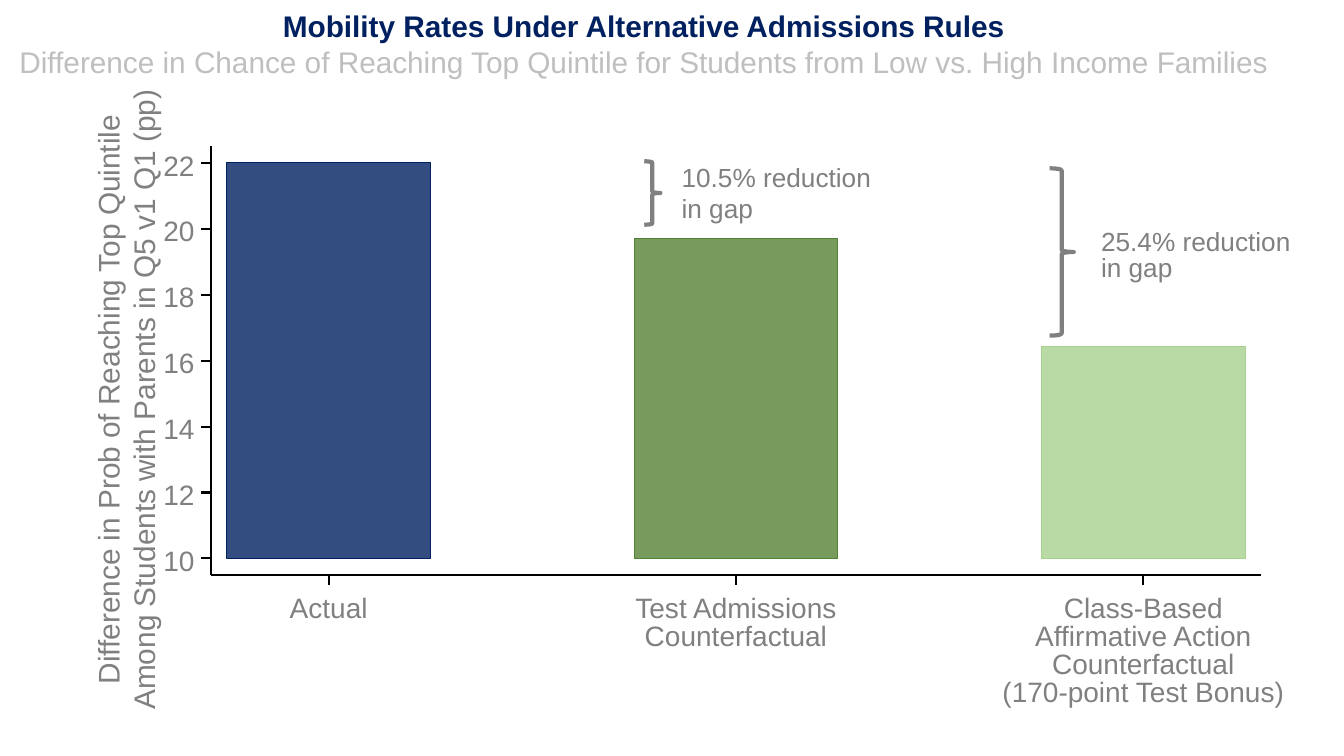
from lxml.etree import SubElement
from pptx import Presentation
from pptx.dml.color import RGBColor
from pptx.enum.shapes import MSO_CONNECTOR, MSO_SHAPE
from pptx.enum.text import MSO_ANCHOR, MSO_AUTO_SIZE, PP_ALIGN
from pptx.oxml.ns import qn
from pptx.util import Inches, Pt

GREY = "808080"
AXIS_LEFT, AXIS_RIGHT, AXIS_TOP, AXIS_BOTTOM = 2.09, 12.51, 1.45, 5.7
BASE_VALUE, BASE_TOP, UNIT_HEIGHT = 10, 5.54, 0.3267
BAR_WIDTH, TICK_LENGTH = 2.02, 0.1
FIRST_CENTER, CENTER_STEP = 3.26, 4.04
BARS = [
    (22.03, "334D80", "002060", ["Actual"]),
    (19.7, "769B5D", "548235", ["Test Admissions", "Counterfactual"]),
    (16.43, "BADAA5", "A9D18E", ["Class-Based", "Affirmative Action",
                                 "Counterfactual", "(170-point Test Bonus)"]),
]


def color(hex_text):
    return RGBColor.from_string(hex_text)


def value_top(value):
    return BASE_TOP - (value - BASE_VALUE) * UNIT_HEIGHT


def add_line(page, start_x, start_y, end_x, end_y):
    line = page.shapes.add_connector(
        MSO_CONNECTOR.STRAIGHT,
        Inches(start_x), Inches(start_y), Inches(end_x), Inches(end_y))
    line.line.color.rgb = color("000000")
    line.line.width = Pt(1.5)
    SubElement(line._element.spPr, qn("a:effectLst"))


def add_bar(page, center, value, fill, outline):
    top = value_top(value)
    bar = page.shapes.add_shape(
        MSO_SHAPE.RECTANGLE, Inches(center - BAR_WIDTH / 2), Inches(top),
        Inches(BAR_WIDTH), Inches(BASE_TOP - top))
    bar.shadow.inherit = False
    bar.fill.solid()
    bar.fill.fore_color.rgb = color(fill)
    bar.line.color.rgb = color(outline)
    bar.line.width = Pt(0)


def add_brace(page, left, top, width, height):
    brace = page.shapes.add_shape(
        MSO_SHAPE.RIGHT_BRACE,
        Inches(left), Inches(top), Inches(width), Inches(height))
    brace.shadow.inherit = False
    brace.fill.background()
    brace.line.color.rgb = color(GREY)
    brace.line.width = Pt(3)


def format_para(para, size, hex_text, align, bold=False):
    para.alignment = align
    para.font.name = "Arial"
    para.font.size = Pt(size)
    para.font.bold = bold
    para.font.color.rgb = color(hex_text)


def add_label(page, left, top, width, height, lines, size,
              align=PP_ALIGN.LEFT, spacing=None):
    box = page.shapes.add_textbox(
        Inches(left), Inches(top), Inches(width), Inches(height))
    frame = box.text_frame
    frame.word_wrap = False
    frame.margin_left = frame.margin_right = 0
    frame.margin_top = frame.margin_bottom = 0
    frame.text = "\n".join(lines)
    for para in frame.paragraphs:
        format_para(para, size, GREY, align)
        if spacing:
            para.line_spacing = Pt(spacing)
    return box


def set_title(page, heading, subheading):
    title = page.shapes.title
    title.left, title.top = Inches(0), Inches(0.04)
    title.width, title.height = Inches(12.77), Inches(0.79)
    frame = title.text_frame
    frame.word_wrap = True
    frame.auto_size = MSO_AUTO_SIZE.NONE
    frame.vertical_anchor = MSO_ANCHOR.TOP
    frame.margin_left = frame.margin_right = Inches(0.07)
    frame.margin_top = frame.margin_bottom = Inches(0.04)
    frame.text = heading + "\n" + subheading
    first, second = frame.paragraphs
    format_para(first, 21.3, "002060", PP_ALIGN.CENTER, True)
    format_para(second, 21.3, "BFBFBF", PP_ALIGN.CENTER)


def add_value_axis(page):
    add_line(page, AXIS_LEFT, AXIS_BOTTOM, AXIS_LEFT, AXIS_TOP)
    for value in range(10, 23, 2):
        top = value_top(value)
        add_line(page, AXIS_LEFT, top, AXIS_LEFT - TICK_LENGTH, top)
        add_label(page, 1.62, top - 0.15, 0.31, 0.34, [str(value)], 20)
    axis_title = add_label(
        page, -1.87, 3.61, 6.23, 0.71,
        ["Difference in Prob of Reaching Top Quintile",
         "Among Students with Parents in Q5 v1 Q1 (pp)"],
        21.3, PP_ALIGN.CENTER, 25.5)
    axis_title.rotation = 270


def add_categories(page):
    add_line(page, AXIS_LEFT, AXIS_BOTTOM, AXIS_RIGHT, AXIS_BOTTOM)
    for index, (value, fill, outline, lines) in enumerate(BARS):
        center = FIRST_CENTER + index * CENTER_STEP
        add_bar(page, center, value, fill, outline)
        add_line(page, center, AXIS_BOTTOM, center, AXIS_BOTTOM + TICK_LENGTH)
        add_label(page, center - 1.42, 5.91, 2.84, 0.28 * len(lines),
                  lines, 20, PP_ALIGN.CENTER, 20)


def main():
    deck = Presentation()
    deck.slide_width, deck.slide_height = Inches(13.33), Inches(7.5)
    page = deck.slides.add_slide(deck.slide_layouts[5])
    set_title(page, "Mobility Rates Under Alternative Admissions Rules",
              "Difference in Chance of Reaching Top Quintile for Students "
              "from Low vs. High Income Families")
    add_categories(page)
    add_value_axis(page)
    add_brace(page, 6.39, 1.6, 0.16, 0.63)
    add_label(page, 6.76, 1.6, 1.89, 0.63,
              ["10.5% reduction", "in gap"], 18.7)
    add_brace(page, 10.41, 1.67, 0.24, 1.66)
    add_label(page, 10.92, 2.29, 1.89, 0.52,
              ["25.4% reduction", "in gap"], 18.7, spacing=18.4)
    deck.save("out.pptx")


if __name__ == "__main__":
    main()
